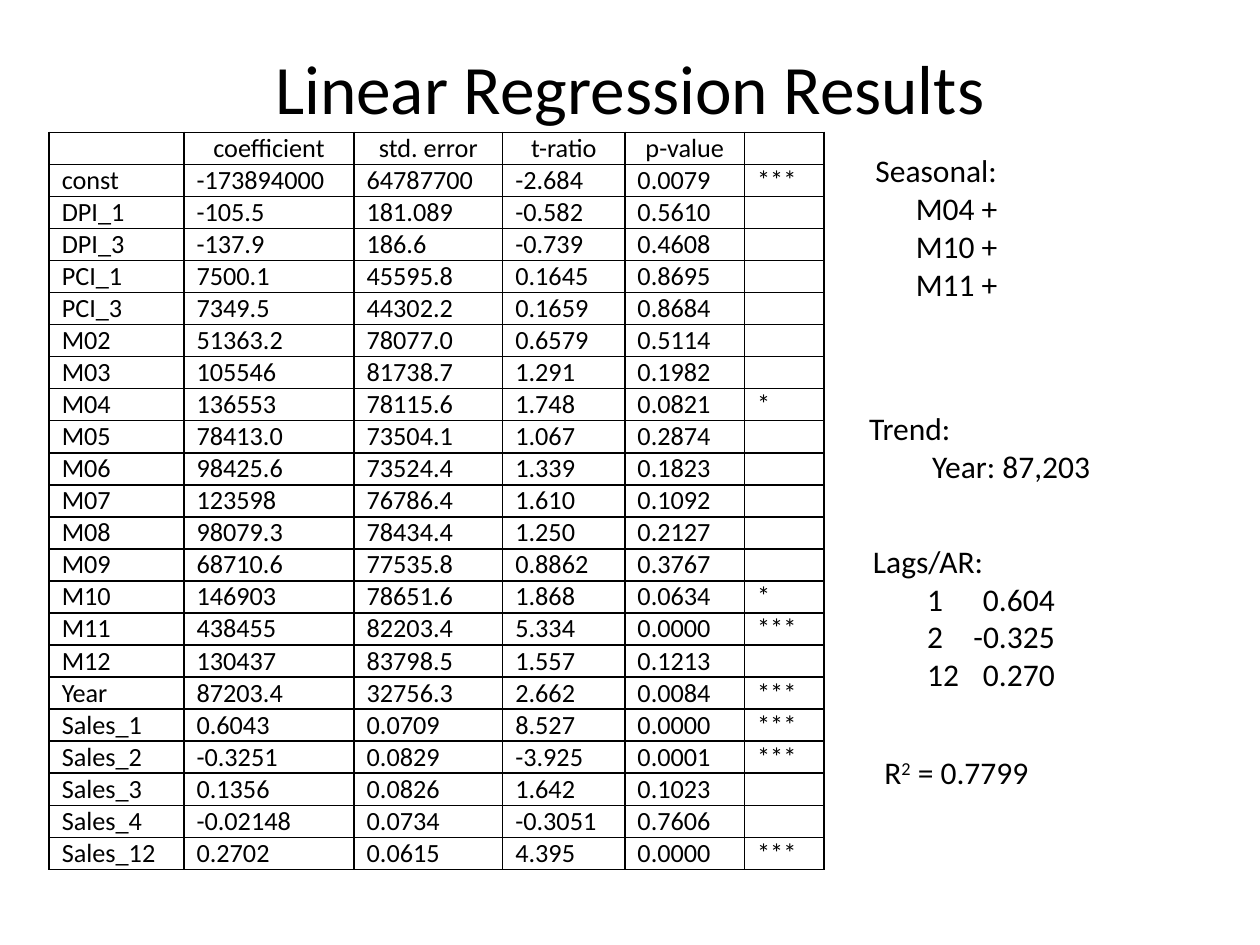
from lxml import etree
from pptx import Presentation
from pptx.dml.color import RGBColor
from pptx.enum.text import MSO_ANCHOR, MSO_AUTO_SIZE, PP_ALIGN
from pptx.oxml.ns import qn
from pptx.util import Inches, Pt

LEFT, CENTER = PP_ALIGN.LEFT, PP_ALIGN.CENTER
TOP, MIDDLE = MSO_ANCHOR.TOP, MSO_ANCHOR.MIDDLE
GROW, FIXED = MSO_AUTO_SIZE.SHAPE_TO_FIT_TEXT, MSO_AUTO_SIZE.NONE

FONT, BLACK = "Calibri", "000000"
CELL_SIZE = 15

TITLE = "Linear Regression Results"
HEADER = ("", "coefficient", "std. error", "t-ratio", "p-value", "")
RESULTS = [
    ("const", "-173894000", "64787700", "-2.684", "0.0079", "***"),
    ("DPI_1", "-105.5", "181.089", "-0.582", "0.5610", ""),
    ("DPI_3", "-137.9", "186.6", "-0.739", "0.4608", ""),
    ("PCI_1", "7500.1", "45595.8", "0.1645", "0.8695", ""),
    ("PCI_3", "7349.5", "44302.2", "0.1659", "0.8684", ""),
    ("M02", "51363.2", "78077.0", "0.6579", "0.5114", ""),
    ("M03", "105546", "81738.7", "1.291", "0.1982", ""),
    ("M04", "136553", "78115.6", "1.748", "0.0821", "*"),
    ("M05", "78413.0", "73504.1", "1.067", "0.2874", ""),
    ("M06", "98425.6", "73524.4", "1.339", "0.1823", ""),
    ("M07", "123598", "76786.4", "1.610", "0.1092", ""),
    ("M08", "98079.3", "78434.4", "1.250", "0.2127", ""),
    ("M09", "68710.6", "77535.8", "0.8862", "0.3767", ""),
    ("M10", "146903", "78651.6", "1.868", "0.0634", "*"),
    ("M11", "438455", "82203.4", "5.334", "0.0000", "***"),
    ("M12", "130437", "83798.5", "1.557", "0.1213", ""),
    ("Year", "87203.4", "32756.3", "2.662", "0.0084", "***"),
    ("Sales_1", "0.6043", "0.0709", "8.527", "0.0000", "***"),
    ("Sales_2", "-0.3251", "0.0829", "-3.925", "0.0001", "***"),
    ("Sales_3", "0.1356", "0.0826", "1.642", "0.1023", ""),
    ("Sales_4", "-0.02148", "0.0734", "-0.3051", "0.7606", ""),
    ("Sales_12", "0.2702", "0.0615", "4.395", "0.0000", "***"),
]
TABLE_LEFT, TABLE_TOP, TABLE_HEIGHT = 0.39, 1.05, 5.85
COL_WIDTHS = (1.07, 1.35, 1.18, 0.97, 0.95, 0.63)

# Place, lines and tab stops (inches, alignment) of each note beside the table
NOTES = [
    ((6.85, 1.15, 1.37, 1.31),
     ["Seasonal:", "\tM04 +", "\tM10 +", "\tM11 +"], [(0.32, "l")]),
    ((6.8, 3.2, 2.02, 0.71), ["Trend:", "\tYear: 87,203"], [(0.5, "l")]),
    ((6.83, 4.25, 1.98, 1.31),
     ["Lags/AR:", "\t1\t0.604", "\t2\t-0.325", "\t12\t0.270"],
     [(0.43, "l"), (1, "dec")]),
]
R_SQUARED_BOX = (6.92, 5.93, 1.37, 0.4)


def add_run(p, text, size=18, color=BLACK, baseline=None):
    r = p.add_run()
    r.text = text
    r.font.name, r.font.size = FONT, Pt(size)
    r.font.color.rgb = RGBColor.from_string(color)
    if baseline:
        r.font._element.set("baseline", str(baseline))


def add_tabs(p, tabs):
    tab_list = etree.SubElement(p._p.get_or_add_pPr(), qn("a:tabLst"))
    for pos, align in tabs:
        etree.SubElement(tab_list, qn("a:tab"), pos=str(Inches(pos)), algn=align)


def add_text(s, box, lines, size=18, align=LEFT, anchor=TOP, tabs=(),
             wrap=True, auto_size=GROW):
    tf = s.shapes.add_textbox(*map(Inches, box)).text_frame
    tf.word_wrap, tf.auto_size, tf.vertical_anchor = wrap, auto_size, anchor
    for i, line in enumerate(lines):
        p = tf.add_paragraph() if i else tf.paragraphs[0]
        p.alignment = align
        if "\t" in line:
            add_tabs(p, tabs)
        add_run(p, line, size)
    return tf


def add_borders(cell, color=BLACK, width=1):
    tc_pr = cell._tc.get_or_add_tcPr()
    for side in ("lnL", "lnR", "lnT", "lnB"):
        ln = etree.SubElement(tc_pr, qn(f"a:{side}"), w=str(Pt(width)))
        fill = etree.SubElement(ln, qn("a:solidFill"))
        etree.SubElement(fill, qn("a:srgbClr"), val=color)


def fill_cell(cell, text, align):
    cell.margin_left = cell.margin_right = Inches(0.1)
    cell.margin_top = cell.margin_bottom = 0
    add_borders(cell)
    cell.fill.background()
    p = cell.text_frame.paragraphs[0]
    p.alignment = align
    if text:
        add_run(p, text, CELL_SIZE)
    else:  # keeps an empty cell from stretching its row
        etree.SubElement(p._p, qn("a:endParaRPr"), sz=str(CELL_SIZE * 100))


def add_results_table(s):
    rows = [HEADER, *RESULTS]
    frame = s.shapes.add_table(
        len(rows), len(HEADER), Inches(TABLE_LEFT), Inches(TABLE_TOP),
        Inches(sum(COL_WIDTHS)), Inches(TABLE_HEIGHT))
    table = frame.table
    table.first_row = table.horz_banding = False
    for column, width in zip(table.columns, COL_WIDTHS):
        column.width = Inches(width)
    for i, row in enumerate(rows):
        table.rows[i].height = Inches(TABLE_HEIGHT / len(rows))
        for j, text in enumerate(row):
            fill_cell(table.cell(i, j), text, LEFT if i else CENTER)


def main():
    prs = Presentation()
    prs.slide_width, prs.slide_height = Inches(10), Inches(7.5)
    s = prs.slides.add_slide(prs.slide_layouts[6])
    add_text(s, (0.5, 0.3, 9, 0.78), [TITLE], size=39.6, align=CENTER,
             anchor=MIDDLE, auto_size=FIXED)
    for box, lines, tabs in NOTES:
        add_text(s, box, lines, tabs=tabs)
    p = add_text(s, R_SQUARED_BOX, ["R"], wrap=False).paragraphs[0]
    add_run(p, "2", baseline=30000)
    add_run(p, " = 0.7799")
    add_results_table(s)
    prs.save("out.pptx")


if __name__ == "__main__":
    main()
